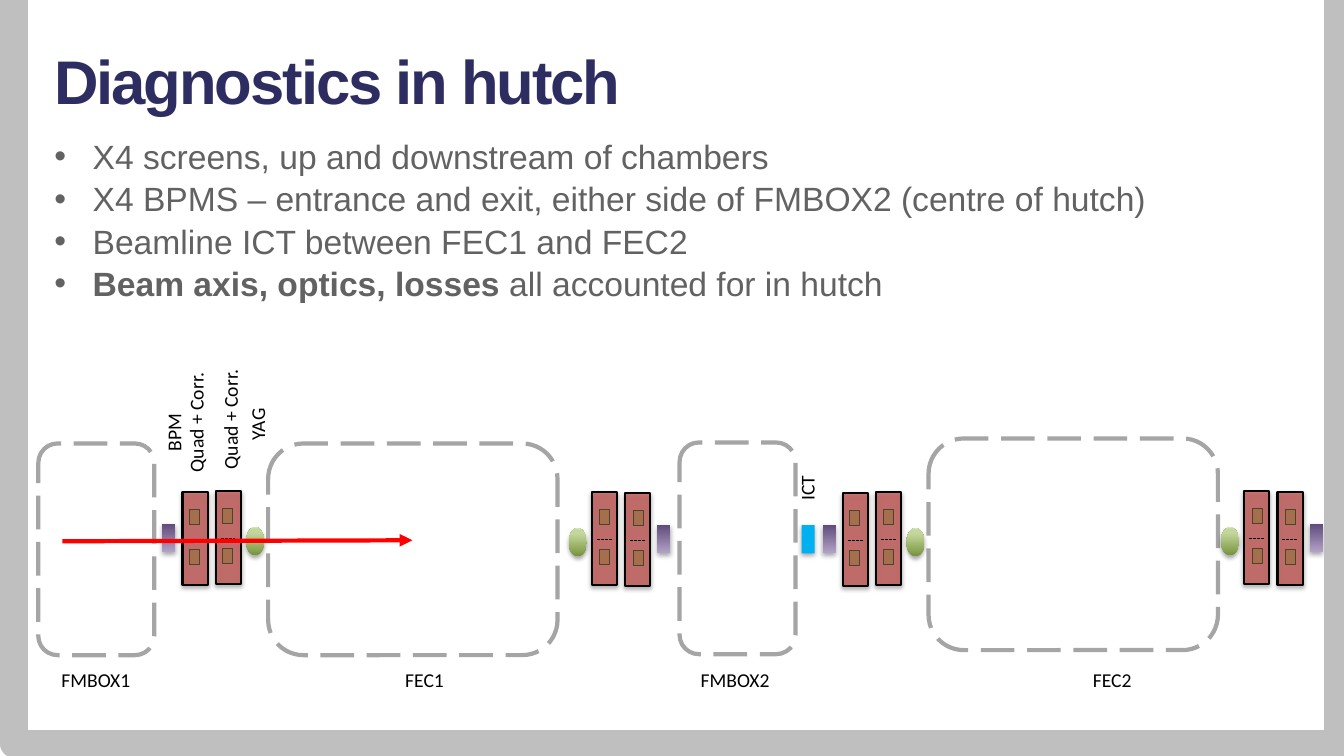
import pptx
import pptx.dml.color
import pptx.enum.dml
import pptx.enum.shapes
import pptx.enum.text
import pptx.oxml.ns
import pptx.util
from dataclasses import dataclass
from lxml import etree

Inches = pptx.util.Inches
Pt = pptx.util.Pt
qn = pptx.oxml.ns.qn
SHAPE = pptx.enum.shapes.MSO_SHAPE
DASH = pptx.enum.dml.MSO_LINE.LONG_DASH


@dataclass(frozen=True)
class Theme:
    head_font: str = "Arial"
    label_font: str = "Calibri"
    title_size: int = 44
    body_size: int = 24
    label_size: int = 14
    title: str = "2E2D62"
    body: str = "626262"
    black: str = "000000"
    chamber: str = "A5A5A5"
    quad: str = "C0504D"
    coil: str = "A56F4D"
    coil_edge: str = "4A452A"
    ict: str = "00B0F0"
    beam: str = "FF0000"
    frame: str = "BFBFBF"
    yag: tuple = ((0, "77933C"), (80, "C3D69B"), (93, "C3D69B"), (100, "D7E4BD"))
    bpm: tuple = ((0, "B3A2C7"), (100, "614B7C"))


T = Theme()


def rgb(color):
    return pptx.dml.color.RGBColor.from_string(color)


def child(parent, tag, **attrs):
    return etree.SubElement(parent, qn(tag), {k: str(v) for k, v in attrs.items()})


# Basic parts
def set_line(line, color, width, dash=None):
    line.color.rgb = rgb(color)
    line.width = Pt(width)
    if dash:
        line.dash_style = dash


def set_gradient(sp, stops):
    sp.fill.gradient()
    sp.fill.gradient_angle = 90
    gs_list = sp._element.spPr.find(qn("a:gradFill")).find(qn("a:gsLst"))
    for gs in list(gs_list):
        gs_list.remove(gs)
    for pos, color in stops:
        child(child(gs_list, "a:gs", pos=pos * 1000), "a:srgbClr", val=color)


def add_shape(slide, kind, box, fill=None, alpha=None, line=None, blur=None):
    sp = slide.shapes.add_shape(kind, *map(Inches, box))
    if fill is None:
        sp.fill.background()
    elif isinstance(fill, tuple):
        set_gradient(sp, fill)
    else:
        sp.fill.solid()
        sp.fill.fore_color.rgb = rgb(fill)
        if alpha:
            color = sp._element.spPr.find(qn("a:solidFill"))[0]
            child(color, "a:alpha", val=alpha * 1000)
    if line:
        set_line(sp.line, *line)
    else:
        sp.line.fill.background()
    sp.shadow.inherit = False
    if blur:
        effects = sp._element.spPr.find(qn("a:effectLst"))
        shadow = child(effects, "a:outerShdw", blurRad=Pt(blur), dist=Pt(1.8),
                       dir=5400000, rotWithShape=0)
        child(child(shadow, "a:srgbClr", val=T.black), "a:alpha", val=35000)
    return sp


def add_line(slide, x1, y1, x2, y2, color, width, dash=None):
    cx = slide.shapes.add_connector(pptx.enum.shapes.MSO_CONNECTOR.STRAIGHT,
                                    *map(Inches, (x1, y1, x2, y2)))
    set_line(cx.line, color, width, dash)
    child(cx._element.spPr, "a:effectLst")
    return cx


def add_text(slide, box, paragraphs, font, size, color):
    tb = slide.shapes.add_textbox(*map(Inches, box))
    tf = tb.text_frame
    tf.word_wrap = True
    for i, runs in enumerate(paragraphs):
        p = tf.add_paragraph() if i else tf.paragraphs[0]
        for text, bold in runs:
            r = p.add_run()
            r.text = text
            r.font.name, r.font.size, r.font.bold = font, Pt(size), bold
            r.font.color.rgb = rgb(color)
    return tb


def add_label(slide, box, text, rotation=0):
    tb = add_text(slide, box, [[(text, False)]], T.label_font, T.label_size, T.black)
    tb.rotation = rotation


# Title and bullets
def add_heading(slide, box):
    tb = add_text(slide, box, [[("Diagnostics in hutch", True)]],
                  T.head_font, T.title_size, T.title)
    tb.text_frame.paragraphs[0].runs[0].font._element.set("spc", "-150")


def add_bullets(slide, box):
    tb = add_text(slide, box, [
        [("X4 screens, up and downstream of chambers", False)],
        [("X4 BPMS – entrance and exit, either side of FMBOX2 (centre of hutch)", False)],
        [("Beamline ICT between FEC1 and FEC2", False)],
        [("Beam axis, optics, losses ", True), ("all accounted for in hutch", False)],
    ], T.head_font, T.body_size, T.body)
    for p in tb.text_frame.paragraphs:
        p.line_spacing = 1.05
        pPr = p._p.get_or_add_pPr()
        pPr.set("marL", str(Inches(0.38)))
        pPr.set("indent", str(-Inches(0.38)))
        child(pPr, "a:buFont", typeface=T.head_font)
        child(pPr, "a:buChar", char="•")


# Beamline parts
def add_chamber(slide, box, name, label_left):
    add_shape(slide, SHAPE.ROUNDED_RECTANGLE, box, line=(T.chamber, 3, DASH))
    add_label(slide, (label_left, 6.58, 1, 0.34), name)


def add_quad(slide, left, top, mirrored):
    add_shape(slide, SHAPE.RECTANGLE, (left, top, 0.25, 0.92), T.quad, 75,
              (T.black, 1.5), 3.1)
    coil_left = left + (0.08 if mirrored else 0.07)
    for dy in (0.17, 0.57):
        add_shape(slide, SHAPE.RECTANGLE, (coil_left, top + dy, 0.1, 0.15), T.coil,
                  line=(T.coil_edge, 0.75))
    mid = top + 0.47
    add_line(slide, left + 0.05, mid, left + 0.2, mid, T.black, 0.25, DASH)


def add_station(slide, left, top, mirrored=False):
    """BPM, two quads and a YAG screen; mirrored runs from YAG to BPM."""
    def place(dx, width):
        return left + (1.01 - dx - width if mirrored else dx)

    add_shape(slide, SHAPE.OVAL, (place(0.83, 0.18), top + 0.36, 0.18, 0.28), T.yag, blur=3.1)
    for dx, dy in ((0.2, 0.01), (0.53, 0)):
        add_quad(slide, place(dx, 0.25), top + dy, mirrored)
    add_shape(slide, SHAPE.RECTANGLE, (place(0, 0.13), top + 0.33, 0.13, 0.28), T.bpm, blur=3.5)


def add_beam(slide, x1, y1, x2, y2):
    beam = add_line(slide, x1, y1, x2, y2, T.beam, 3)
    child(beam.line._get_or_add_ln(), "a:tailEnd", type="triangle")


def add_beamline(slide):
    for left, top, width, name, label_left in (
            (0.38, 4.4, 1.15, "FMBOX1", 0.51), (2.66, 4.4, 2.87, "FEC1", 3.92),
            (6.74, 4.39, 1.15, "FMBOX2", 6.85), (9.21, 4.35, 2.87, "FEC2", 10.74)):
        add_chamber(slide, (left, top, width, 2.1), name, label_left)
    for left, top, mirrored in ((1.61, 4.87, False), (5.64, 4.88, True),
                                (8.16, 4.88, False), (12.11, 4.87, True)):
        add_station(slide, left, top, mirrored)
    add_shape(slide, SHAPE.RECTANGLE, (7.95, 5.21, 0.13, 0.28), T.ict, blur=3.5)
    for left, top, width, name in (
            (1.31, 3.99, 0.83, "BPM"), (1.24, 3.91, 1.41, "Quad + Corr."),
            (1.58, 3.88, 1.41, "Quad + Corr."), (1.85, 3.59, 1.41, "YAG"),
            (7.59, 4.48, 0.83, "ICT")):
        add_label(slide, (left, top, width, 0.34), name, 270)
    add_beam(slide, 0.62, 5.37, 4.09, 5.36)


def main():
    prs = pptx.Presentation()
    prs.slide_width, prs.slide_height = Inches(13.33), Inches(7.5)
    slide = prs.slides.add_slide(prs.slide_layouts[6])
    add_heading(slide, (0.44, 0.38, 6.95, 0.84))
    add_bullets(slide, (0.44, 1.28, 11.72, 1.72))
    add_beamline(slide)
    # Grey border around the page
    add_shape(slide, SHAPE.RECTANGLE, (0.14, -0.47, 13.13, 7.85), line=(T.frame, 20))
    prs.save("out.pptx")


if __name__ == "__main__":
    main()
